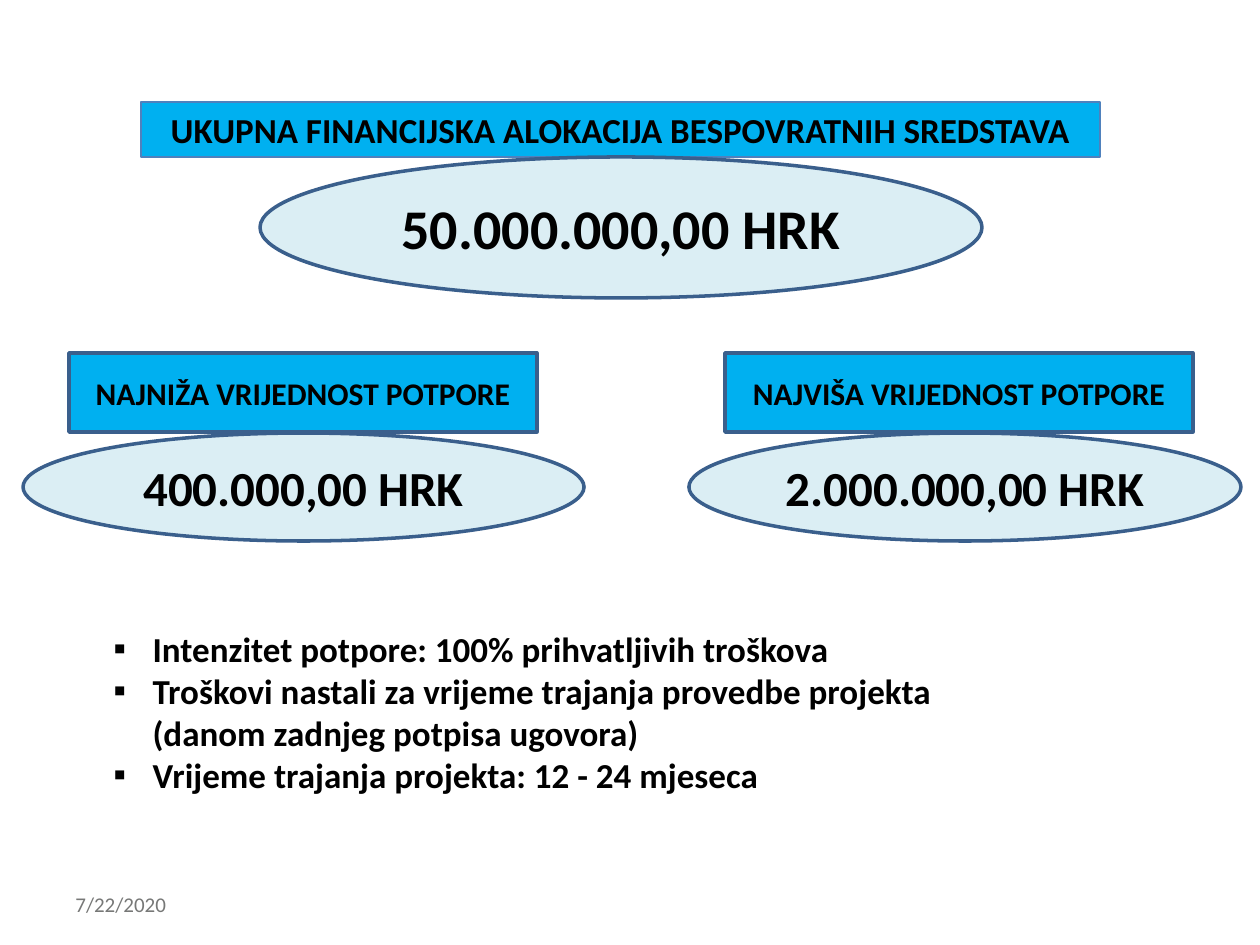
"""Build the slide on grant allocation, limits and conditions."""
from dataclasses import dataclass

from lxml import etree
from pptx import Presentation
from pptx import util as u
from pptx.dml.color import RGBColor
from pptx.enum import shapes, text
from pptx.oxml.ns import qn

PX = 914400 / 126
FONT = "Calibri"
BLACK = RGBColor(0x00, 0x00, 0x00)
GREY = RGBColor(0x77, 0x78, 0x77)
CYAN = RGBColor(0x00, 0xB0, 0xF0)
PALE = RGBColor(0xDB, 0xEE, 0xF4)
BLUE = RGBColor(0x4F, 0x81, 0xBD)
NAVY = RGBColor(0x3A, 0x5F, 0x8C)
RECT = shapes.MSO_SHAPE.RECTANGLE
OVAL = shapes.MSO_SHAPE.OVAL
MID = text.MSO_ANCHOR.MIDDLE
TOP = text.MSO_ANCHOR.TOP


@dataclass
class Box:
    """A place on the slide in px."""
    x: int
    y: int
    w: int
    h: int


@dataclass
class Sign:
    """A filled shape with one centred label."""
    kind: shapes.MSO_SHAPE
    box: Box
    label: str
    size: int
    fill: RGBColor


SIGNS = [
    Sign(OVAL, Box(260, 157, 722, 141), "50.000.000,00 HRK", 32, PALE),
    Sign(RECT, Box(69, 353, 468, 79), "NAJNIŽA VRIJEDNOST POTPORE", 18, CYAN),
    Sign(RECT, Box(725, 353, 468, 79), "NAJVIŠA VRIJEDNOST POTPORE", 18, CYAN),
    Sign(OVAL, Box(23, 433, 561, 108), "400.000,00 HRK", 28, PALE),
    Sign(OVAL, Box(689, 433, 552, 108), "2.000.000,00 HRK", 28, PALE),
]
ITEMS = [
    "Intenzitet potpore: 100% prihvatljivih troškova",
    "Troškovi nastali za vrijeme trajanja provedbe projekta (danom zadnjeg potpisa ugovora)",
    "Vrijeme trajanja projekta: 12 - 24 mjeseca",
]


def px(num: int) -> u.Emu:
    """Turn px into EMU."""
    return u.Emu(round(num * PX))


def place(shape, box: Box) -> None:
    """Move and size a shape."""
    shape.left, shape.top = px(box.x), px(box.y)
    shape.width, shape.height = px(box.w), px(box.h)


def paint(shape, fill: RGBColor, line: RGBColor, width: float) -> None:
    """Set the fill and outline of a shape."""
    shape.fill.solid()
    shape.fill.fore_color.rgb = fill
    shape.line.color.rgb = line
    shape.line.width = u.Pt(width)


def write(shape, words: str, size: int, align=text.PP_ALIGN.LEFT,
          anchor=MID, color: RGBColor = BLACK, bold: bool = True) -> None:
    """Fill a shape with text and format every run."""
    frame = shape.text_frame
    frame.text = words
    frame.word_wrap = True
    frame.auto_size = text.MSO_AUTO_SIZE.NONE
    frame.vertical_anchor = anchor
    for para in frame.paragraphs:
        para.alignment = align
        para.space_before = u.Pt(0)
        for run in para.runs:
            font = run.font
            font.name, font.size, font.bold = FONT, u.Pt(size), bold
            font.color.rgb = color


def mark(para) -> None:
    """Give a paragraph a square bullet and a hanging indent."""
    props = para._p.get_or_add_pPr()
    props.set("marL", str(px(39)))
    props.set("indent", str(px(-39)))
    etree.SubElement(props, qn("a:buFont"), typeface=FONT)
    etree.SubElement(props, qn("a:buChar"), char="▪")


def draw(slide, sign: Sign) -> None:
    """Add one sign to the slide."""
    box = sign.box
    shape = slide.shapes.add_shape(sign.kind, px(box.x), px(box.y), px(box.w), px(box.h))
    shape.shadow.inherit = False
    paint(shape, sign.fill, NAVY, 2)
    write(shape, sign.label, sign.size, text.PP_ALIGN.CENTER)


def main() -> None:
    """Build and save the slide."""
    deck = Presentation()
    deck.slide_width, deck.slide_height = px(1260), px(945)
    slide = deck.slides.add_slide(deck.slide_layouts[1])

    title = slide.shapes.title
    place(title, Box(141, 102, 959, 55))
    paint(title, CYAN, BLUE, 0.75)
    write(title, "UKUPNA FINANCIJSKA ALOKACIJA BESPOVRATNIH SREDSTAVA", 20,
          text.PP_ALIGN.CENTER, TOP)

    for sign in SIGNS:
        draw(slide, sign)

    body = slide.placeholders[1]
    place(body, Box(101, 621, 912, 183))
    write(body, "\n".join(ITEMS), 20, anchor=TOP)
    for para in body.text_frame.paragraphs:
        mark(para)

    date = slide.shapes.add_textbox(px(63), px(879), px(294), px(50))
    write(date, "7/22/2020", 12, color=GREY, bold=False)

    deck.save("out.pptx")


if __name__ == "__main__":
    main()
